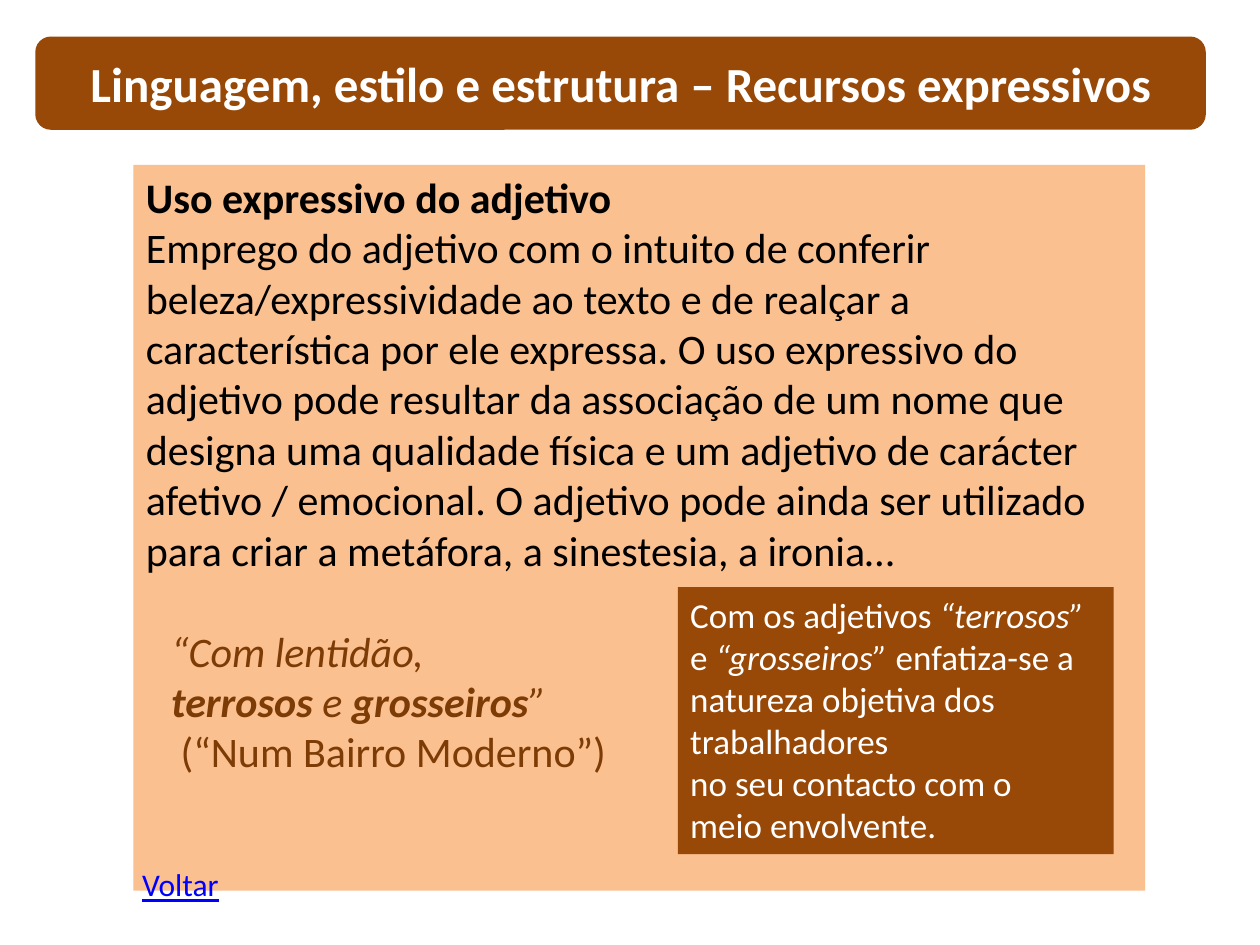
from pptx import Presentation
from pptx.dml.color import RGBColor
from pptx.enum.shapes import MSO_SHAPE
from pptx.enum.text import MSO_ANCHOR, PP_ALIGN
from pptx.util import Inches, Pt

ROUNDED = MSO_SHAPE.ROUNDED_RECTANGLE
CENTER = PP_ALIGN.CENTER
MIDDLE = MSO_ANCHOR.MIDDLE
TITLE_ONLY = 5
FONT = "Calibri"
COLORS = {
    "brown": "984807",
    "peach": "FAC090",
    "quote": "7D3B05",
    "link": "0000FF",
    "black": "000000",
    "white": "FFFFFF",
}
TITLE_AREA = (0.28, 0.29, 9.29, 0.74)


def color(name):
    return RGBColor.from_string(COLORS[name])


def paint(shape, name):
    shape.fill.solid()
    shape.fill.fore_color.rgb = color(name)


def place(shape, area):
    shape.left, shape.top, shape.width, shape.height = map(Inches, area)


def add_banner(page, area, fill):
    banner = page.shapes.add_shape(ROUNDED, *map(Inches, area))
    paint(banner, fill)
    banner.line.fill.background()
    banner.shadow.inherit = False


def add_box(page, area, fill=None):
    box = page.shapes.add_textbox(*map(Inches, area))
    box.text_frame.word_wrap = True
    if fill:
        paint(box, fill)
    return box.text_frame


def write(paragraph, *spans, size, ink, indent=0, before=0, align=None):
    paragraph.alignment = align
    paragraph.space_before = Pt(before)
    if indent:
        properties = paragraph._p.get_or_add_pPr()
        properties.set("marL", str(Inches(indent)))
        properties.set("indent", "0")
    for text, style in spans:
        span = paragraph.add_run()
        span.text = text
        span.font.name = FONT
        span.font.size = Pt(size)
        span.font.color.rgb = color(ink)
        span.font.bold = "b" in style
        span.font.italic = "i" in style
        span.font.underline = "u" in style


def add_title(page):
    add_banner(page, TITLE_AREA, "brown")
    title = page.shapes.title
    place(title, TITLE_AREA)
    title.text_frame.vertical_anchor = MIDDLE
    write(title.text_frame.paragraphs[0],
          ("Linguagem, estilo e estrutura – Recursos expressivos", "b"),
          size=28, ink="white", align=CENTER)


def add_definition(page):
    frame = add_box(page, (1.06, 1.31, 8.03, 5.76), "peach")
    write(frame.paragraphs[0], ("Uso expressivo do adjetivo", "b"), size=24, ink="black")
    write(frame.add_paragraph(),
          ("Emprego do adjetivo com o intuito de conferir beleza/expressividade ao texto "
           "e de realçar a característica por ele expressa. O uso expressivo do adjetivo "
           "pode resultar da associação de um nome que designa uma qualidade física e um "
           "adjetivo de carácter afetivo / emocional. O adjetivo pode ainda ser utilizado "
           "para criar a metáfora, a sinestesia, a ironia…", ""),
          size=24, ink="black")
    quote = [
        [("“Com lentidão,", "i")],
        [("terrosos ", "bi"), ("e ", "i"), ("grosseiros", "bi"), ("”", "i")],
        [(" (“Num Bairro Moderno”)", "")],
    ]
    for index, spans in enumerate(quote):
        write(frame.add_paragraph(), *spans, size=24, ink="quote",
              indent=0.2, before=0 if index else 29)


def add_comment(page):
    frame = add_box(page, (5.38, 4.66, 3.46, 2.12), "brown")
    write(frame.paragraphs[0],
          ("Com os adjetivos ", ""), ("“terrosos” ", "i"), ("e", ""),
          (" “grosseiros” ", "i"),
          ("enfatiza-se a natureza objetiva dos trabalhadores", ""),
          size=20, ink="white")
    for text in ("no seu contacto com o", "meio envolvente."):
        write(frame.add_paragraph(), (text, ""), size=20, ink="white")


def add_back_label(page):
    frame = add_box(page, (1.03, 6.82, 1.73, 0.4))
    write(frame.paragraphs[0], ("Voltar", "u"), size=18, ink="link")


def main():
    deck = Presentation()
    deck.slide_width, deck.slide_height = Inches(10), Inches(7.5)
    page = deck.slides.add_slide(deck.slide_layouts[TITLE_ONLY])
    add_title(page)
    add_definition(page)
    add_comment(page)
    add_back_label(page)
    title = page.shapes.title._element
    title.getparent().append(title)
    deck.save("out.pptx")


if __name__ == "__main__":
    main()
